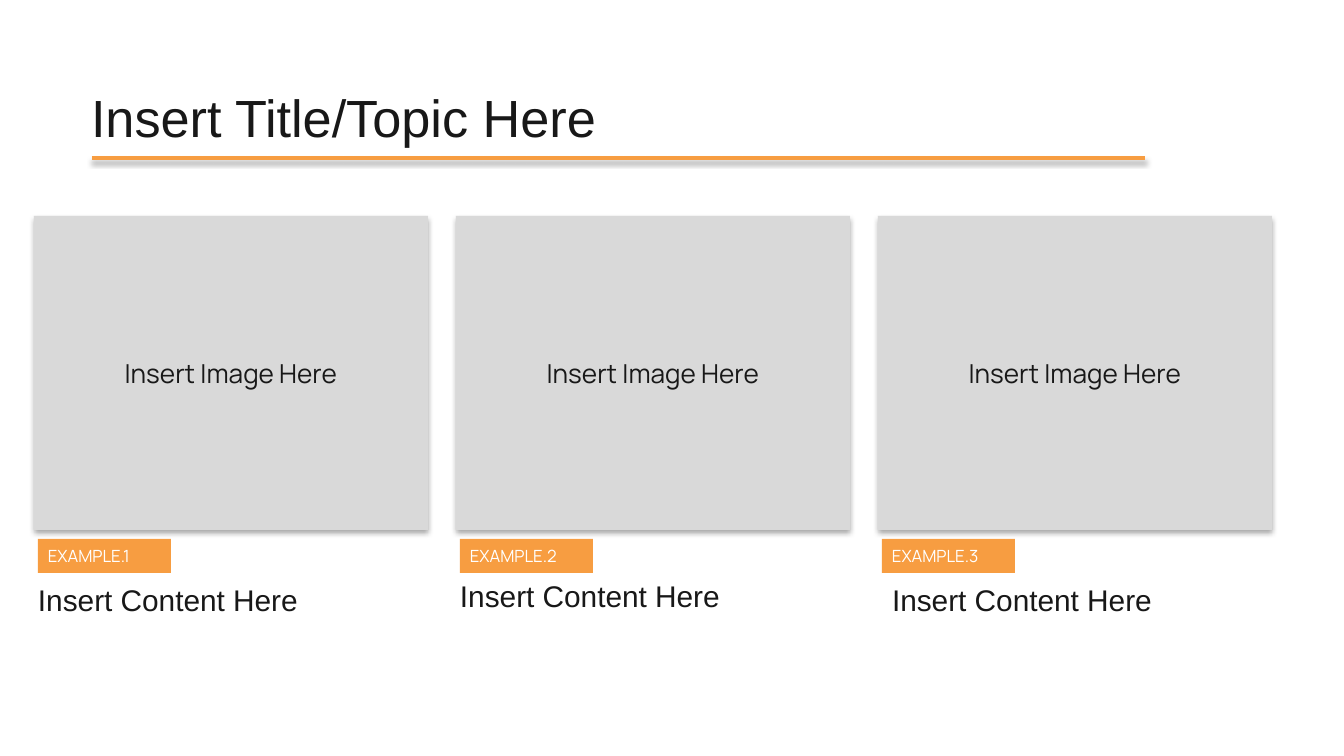
import pptx
import pptx.util
import pptx.dml.color
import pptx.enum.shapes
import pptx.enum.text
import pptx.oxml
import pptx.oxml.ns

RGBColor = pptx.dml.color.RGBColor
Align = pptx.enum.text.PP_ALIGN
Anchor = pptx.enum.text.MSO_ANCHOR

WHITE = RGBColor(0xFF, 0xFF, 0xFF)
INK = RGBColor(0x18, 0x18, 0x18)
GRAY = RGBColor(0xD9, 0xD9, 0xD9)
ORANGE = RGBColor(0xF7, 0x9D, 0x41)

SCALE = 914400 / 134.4
COLUMN_LEFT = 34
COLUMN_PITCH = 422
CONTENT_PLACES = [(28, 577), (450, 573), (882, 577)]


def px(length):
    return pptx.util.Emu(round(length * SCALE))


class PageBuilder:
    heading_font = "Arial"
    label_font = "Manrope"

    def __init__(self, page):
        self.page = page

    def add_text(self, box, text, size, font, color, align=Align.LEFT,
                 anchor=Anchor.TOP, insets=(13, 7)):
        frame = box.text_frame
        frame.word_wrap = True
        frame.vertical_anchor = anchor
        frame.margin_left = frame.margin_right = px(insets[0])
        frame.margin_top = frame.margin_bottom = px(insets[1])
        para = frame.paragraphs[0]
        para.alignment = align
        span = para.add_run()
        span.text = text
        span.font.size = pptx.util.Pt(size)
        span.font.name = font
        span.font.color.rgb = color

    def shadow(self, element, blur, distance, opacity):
        properties = element.spPr
        for effects in properties.findall(pptx.oxml.ns.qn("a:effectLst")):
            properties.remove(effects)
        properties.append(pptx.oxml.parse_xml(
            f'<a:effectLst {pptx.oxml.ns.nsdecls("a")}>'
            f'<a:outerShdw blurRad="{pptx.util.Pt(blur)}" dist="{pptx.util.Pt(distance)}" '
            'dir="5400000" algn="t" rotWithShape="0"><a:srgbClr val="000000">'
            f'<a:alpha val="{opacity * 1000}"/></a:srgbClr></a:outerShdw></a:effectLst>'))

    def title(self, text, left, top, width, height):
        box = self.page.shapes.title
        box.left, box.top, box.width, box.height = map(px, (left, top, width, height))
        self.add_text(box, text, 28, self.heading_font, INK)
        box.text_frame.auto_size = pptx.enum.text.MSO_AUTO_SIZE.SHAPE_TO_FIT_TEXT

    def rectangle(self, left, top, width, height, fill):
        box = self.page.shapes.add_shape(
            pptx.enum.shapes.MSO_SHAPE.RECTANGLE, *map(px, (left, top, width, height)))
        box.shadow.inherit = False
        box.fill.solid()
        box.fill.fore_color.rgb = fill
        box.line.fill.background()
        return box

    def image_area(self, left, top):
        box = self.rectangle(left, top, 394, 314, GRAY)
        self.shadow(box.element, 3.1, 1.8, 35)
        self.add_text(box, "Insert Image Here", 14, self.label_font, INK,
                      Align.CENTER, Anchor.MIDDLE)

    def tag(self, text, left, top):
        box = self.rectangle(left, top, 133, 34, ORANGE)
        self.add_text(box, text, 9, self.label_font, WHITE,
                      anchor=Anchor.MIDDLE, insets=(10, 5))

    def content(self, left, top):
        box = self.page.shapes.add_textbox(*map(px, (left, top, 399, 47)))
        self.add_text(box, "Insert Content Here", 16, self.heading_font, INK, insets=(10, 5))
        box.text_frame.auto_size = pptx.enum.text.MSO_AUTO_SIZE.SHAPE_TO_FIT_TEXT

    def rule(self, left, right, top):
        line = self.page.shapes.add_connector(
            pptx.enum.shapes.MSO_CONNECTOR.STRAIGHT, *map(px, (left, top, right, top)))
        line.line.color.rgb = ORANGE
        line.line.width = pptx.util.Pt(2)
        self.shadow(line.element, 3.1, 1.6, 38)


def main():
    deck = pptx.Presentation()
    deck.slide_width, deck.slide_height = px(1344), px(756)
    builder = PageBuilder(deck.slides.add_slide(deck.slide_layouts[5]))
    builder.title("Insert Title/Topic Here", 78, 78, 625, 77)
    for index, place in enumerate(CONTENT_PLACES):
        left = COLUMN_LEFT + index * COLUMN_PITCH
        builder.image_area(left, 216)
        builder.tag(f"EXAMPLE.{index + 1}", left + 4, 539)
        builder.content(*place)
    builder.rule(92, 1145, 158)
    deck.save("out.pptx")


if __name__ == "__main__":
    main()
